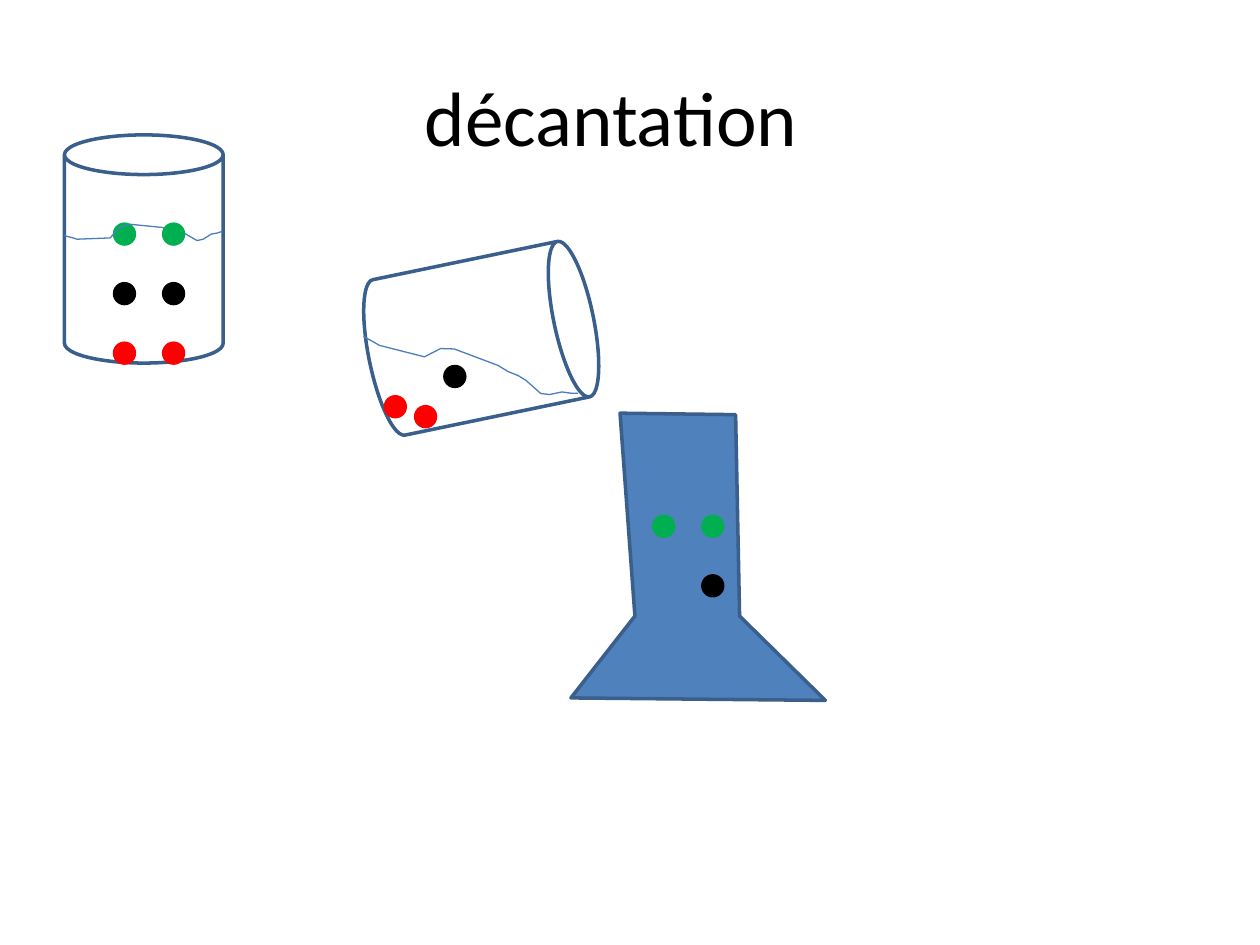
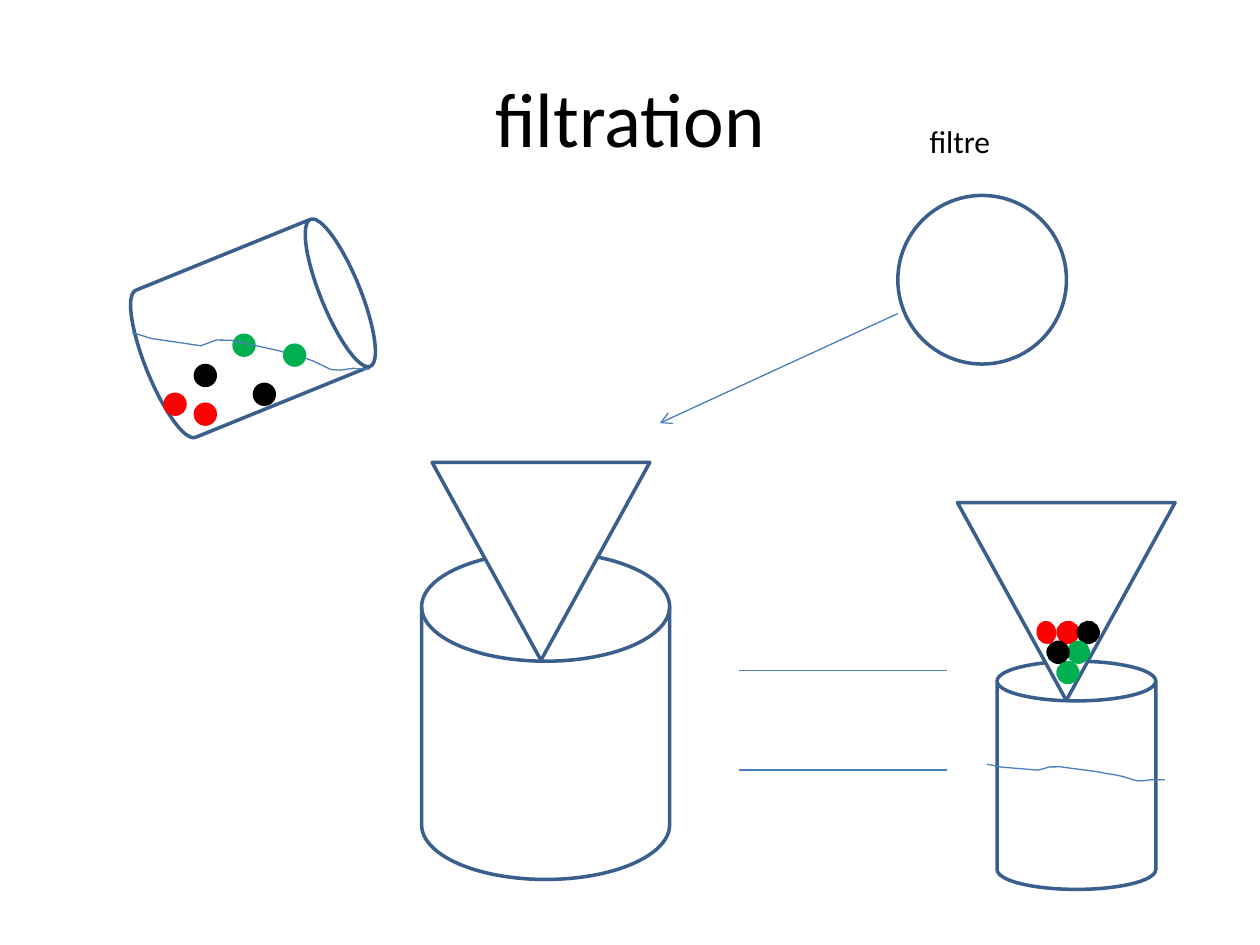
"""Build two slides that show decantation and filtration with beakers and grains."""
from dataclasses import dataclass

from lxml.etree import SubElement
from pptx import Presentation
from pptx.dml.color import RGBColor
from pptx.enum.shapes import MSO_CONNECTOR, MSO_SHAPE
from pptx.enum.text import MSO_ANCHOR, PP_ALIGN
from pptx.oxml.ns import qn
from pptx.util import Cm, Pt


@dataclass(frozen=True)
class Theme:
    """Colours, type sizes and line widths shared by the slides."""
    font: str = "Calibri"
    title: Pt = Pt(44)
    label: Pt = Pt(18)
    thick: Pt = Pt(2)
    thin: Pt = Pt(0.75)
    black: RGBColor = RGBColor(0, 0, 0)
    white: RGBColor = RGBColor(255, 255, 255)
    red: RGBColor = RGBColor(255, 0, 0)
    green: RGBColor = RGBColor(0x00, 0xB0, 0x50)
    blue: RGBColor = RGBColor(0x4F, 0x81, 0xBD)
    outline: RGBColor = RGBColor(0x3A, 0x5F, 0x8C)
    water: RGBColor = RGBColor(0x4B, 0x7E, 0xBC)


T = Theme()
BEAKER = (3.2, 4.6)
FUNNEL = (4.39, 3.99)
GRAIN = 0.4
WAVE = [(0, 0.7), (0.05, 0.83), (0.08, 0.92), (0.29, 0.84), (0.35, 0.18),
        (0.41, 0), (0.62, 0.2), (0.67, 0.36), (0.72, 0.42), (0.76, 0.55),
        (0.84, 1), (0.88, 0.92), (0.93, 0.61), (0.97, 0.54), (1, 0.44)]


def draw(s, kind, x, y, w, h, fill=T.white, line=T.outline, rot=0):
    """Add a filled preset shape, with lengths in centimetres."""
    sp = s.shapes.add_shape(kind, Cm(x), Cm(y), Cm(w), Cm(h))
    sp.shadow.inherit = False
    sp.fill.solid()
    sp.fill.fore_color.rgb = fill
    sp.line.color.rgb = line
    sp.line.width = T.thick
    sp.rotation = rot


def ripple(s, x, y, w, h, rot=0):
    """Add the water surface, scaled to a box in centimetres."""
    pts = [(Cm(x + u * w), Cm(y + v * h)) for u, v in WAVE]
    fb = s.shapes.build_freeform(*pts[0])
    fb.add_line_segments(pts[1:], close=False)
    sp = fb.convert_to_shape()
    sp.shadow.inherit = False
    sp.fill.background()
    sp.line.color.rgb = T.water
    sp.line.width = T.thin
    sp.rotation = rot


prs = Presentation()
prs.slide_width, prs.slide_height = Cm(25.4), Cm(19.05)
decant, filtration = [prs.slides.add_slide(prs.slide_layouts[6]) for _ in range(2)]

for s, text, x, y, w, h, size, wrap in [
    (decant, "décantation", 0.89, 0.74, 22.86, 3.18, T.title, True),
    (filtration, "filtration", 1.27, 0.76, 22.86, 3.18, T.title, True),
    (filtration, "filtre", 18.49, 2.34, 1.75, 1.02, T.label, False),
]:
    tf = s.shapes.add_textbox(Cm(x), Cm(y), Cm(w), Cm(h)).text_frame
    tf.word_wrap = wrap
    tf.text = text
    p = tf.paragraphs[0]
    if wrap:
        tf.vertical_anchor = MSO_ANCHOR.MIDDLE
        p.alignment = PP_ALIGN.CENTER
    r = p.runs[0]
    r.font.name, r.font.size, r.font.color.rgb = T.font, size, T.black

s = decant
flask = [(Cm(x), Cm(y)) for x, y in [
    (12.5, 8.33), (14.83, 8.36), (14.91, 12.42),
    (16.64, 14.12), (11.51, 14.07), (12.8, 12.42)]]
fb = s.shapes.build_freeform(*flask[0])
fb.add_line_segments(flask[1:], close=True)
sp = fb.convert_to_shape()
sp.shadow.inherit = False
sp.fill.solid()
sp.fill.fore_color.rgb = T.blue
sp.line.color.rgb = T.outline
sp.line.width = T.thick

draw(s, MSO_SHAPE.CAN, 8.1, 4.52, *BEAKER, rot=78.3)
for x, y, color in [(8.97, 7.39, T.black), (8.38, 8.2, T.red), (7.77, 8, T.red),
                    (13.18, 10.41, T.green), (14.17, 10.41, T.green),
                    (14.17, 11.61, T.black)]:
    draw(s, MSO_SHAPE.OVAL, x, y, GRAIN, GRAIN, color, color)
ripple(s, 7.26, 7.14, 4.47, 0.38, 16.1)

draw(s, MSO_SHAPE.CAN, 1.3, 2.72, *BEAKER)
for x in (2.31, 3.3):
    for i, color in enumerate((T.green, T.black, T.red)):
        draw(s, MSO_SHAPE.OVAL, x, 4.52 + 1.2 * i, GRAIN, GRAIN, color, color)
    if x == 2.31:
        ripple(s, 1.3, 4.52, 3.18, 0.33)

s = filtration
draw(s, MSO_SHAPE.CAN, 3.5, 4.32, *BEAKER, rot=67.9)
for x, y, color in [(4.72, 6.76, T.green), (3.33, 7.95, T.red), (3.94, 7.37, T.black),
                    (5.74, 6.96, T.green), (3.94, 8.15, T.red), (5.13, 7.75, T.black)]:
    draw(s, MSO_SHAPE.OVAL, x, y, GRAIN, GRAIN, color, color)
    if color == T.black and x == 3.94:
        ripple(s, 2.64, 6.93, 4.85, 0.25, 9.5)

draw(s, MSO_SHAPE.FLOWCHART_MAGNETIC_DISK, 8.5, 11.13, 5, 6.6)
draw(s, MSO_SHAPE.ISOSCELES_TRIANGLE, 8.71, 9.32, *FUNNEL, rot=180)
draw(s, MSO_SHAPE.OVAL, 18.1, 3.94, 3.4, 3.4)

for x1, y1, x2, y2, arrow in [(18.1, 6.32, 13.3, 8.53, True),
                              (14.9, 13.51, 19.1, 13.51, False),
                              (14.9, 15.52, 19.1, 15.52, False)]:
    c = s.shapes.add_connector(MSO_CONNECTOR.STRAIGHT, Cm(x1), Cm(y1), Cm(x2), Cm(y2))
    c.line.color.rgb = T.water
    c.line.width = T.thin
    pr = c._element.spPr
    if arrow:
        SubElement(pr.find(qn("a:ln")), qn("a:tailEnd"), type="arrow")
    SubElement(pr, qn("a:effectLst"))

draw(s, MSO_SHAPE.CAN, 20.1, 13.33, *BEAKER)
ripple(s, 19.89, 15.49, 3.6, 0.13, 5.5)
draw(s, MSO_SHAPE.ISOSCELES_TRIANGLE, 19.3, 10.13, *FUNNEL, rot=180)
for x, y, w, color in [(21.33, 13.36, GRAIN, T.green), (21.33, 12.55, GRAIN, T.red),
                       (21.74, 12.55, GRAIN, T.black), (21.54, 12.95, GRAIN, T.green),
                       (20.93, 12.55, 0.33, T.red), (21.13, 12.95, GRAIN, T.black)]:
    draw(s, MSO_SHAPE.OVAL, x, y, w, GRAIN, color, color, 350.4)

prs.save("out.pptx")
